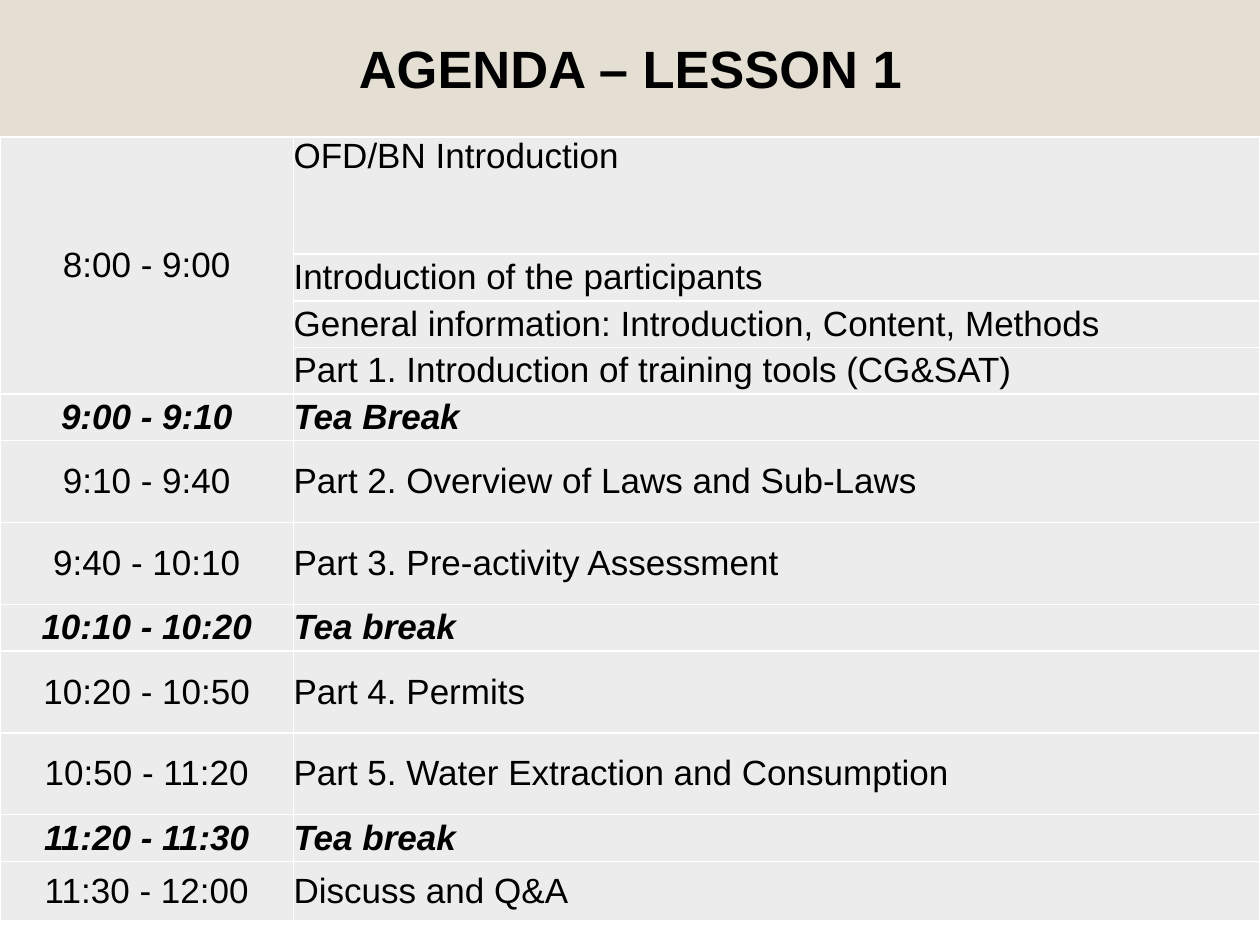
from dataclasses import dataclass

from lxml.etree import SubElement
from pptx import Presentation
from pptx.dml.color import RGBColor
from pptx.enum.shapes import MSO_SHAPE
from pptx.enum.text import MSO_ANCHOR, PP_ALIGN
from pptx.oxml.ns import qn
from pptx.util import Inches, Pt


@dataclass(frozen=True)
class Theme:
    """Colours, font and type sizes of the agenda."""

    font: str = "Arial"
    title_size: int = 30
    body_size: int = 20
    ink: str = "000000"
    band: str = "E4DFD2"
    cell: str = "ECECEC"
    border: str = "FFFFFF"


SLOTS = [
    ("8:00 - 9:00", [
        "OFD/BN Introduction",
        "Introduction of the participants",
        "General information: Introduction, Content, Methods",
        "Part 1. Introduction of training tools (CG&SAT)",
    ]),
    ("9:00 - 9:10", ["Tea Break"]),
    ("9:10 - 9:40", ["Part 2. Overview of Laws and Sub-Laws"]),
    ("9:40 - 10:10", ["Part 3. Pre-activity Assessment"]),
    ("10:10 - 10:20", ["Tea break"]),
    ("10:20 - 10:50", ["Part 4. Permits"]),
    ("10:50 - 11:20", ["Part 5. Water Extraction and Consumption"]),
    ("11:20 - 11:30", ["Tea break"]),
    ("11:30 - 12:00", ["Discuss and Q&A"]),
]
SHORT, TALL = 0.37, 0.65
ROW_HEIGHTS = [0.93, *[SHORT] * 4, TALL, TALL, SHORT, TALL, TALL, SHORT, 0.47]
COLUMN_WIDTHS = [2.33, 7.67]


class AgendaSlide:
    """Draws agenda elements on one slide in one theme."""

    def __init__(self, presentation, theme):
        """Add a blank slide to the presentation."""
        self.theme = theme
        self.width = presentation.slide_width
        self.height = presentation.slide_height
        self.slide = presentation.slides.add_slide(presentation.slide_layouts[6])

    def place(self, left, top, width, height):
        """Turn shares of the slide into lengths."""
        return (int(left * self.width), int(top * self.height),
                int(width * self.width), int(height * self.height))

    def style(self, paragraph, text, size, align, bold=False, italic=False):
        """Write text into a paragraph in the theme font."""
        paragraph.text = text
        paragraph.alignment = align
        font = paragraph.font
        font.name, font.size = self.theme.font, Pt(size)
        font.bold, font.italic = bold, italic
        font.color.rgb = RGBColor.from_string(self.theme.ink)

    def band(self, *area):
        """Draw a plain coloured band."""
        shape = self.slide.shapes.add_shape(MSO_SHAPE.RECTANGLE, *self.place(*area))
        shape.shadow.inherit = False
        shape.fill.solid()
        shape.fill.fore_color.rgb = RGBColor.from_string(self.theme.band)
        shape.line.fill.background()

    def title(self, text, *area):
        """Write the centred title."""
        frame = self.slide.shapes.add_textbox(*self.place(*area)).text_frame
        frame.word_wrap = True
        frame.margin_left = frame.margin_right = 0
        frame.margin_top = frame.margin_bottom = 0
        paragraph = frame.paragraphs[0]
        paragraph.line_spacing = Pt(32.7)
        self.style(paragraph, text, self.theme.title_size, PP_ALIGN.CENTER, bold=True)

    def prepare_cell(self, cell):
        """Give a cell its borders, fill and margins."""
        properties = cell._tc.get_or_add_tcPr()
        for side in ("a:lnL", "a:lnR", "a:lnT", "a:lnB"):
            line = SubElement(properties, qn(side), w=str(Pt(1)))
            fill = SubElement(line, qn("a:solidFill"))
            SubElement(fill, qn("a:srgbClr"), val=self.theme.border)
        cell.fill.solid()
        cell.fill.fore_color.rgb = RGBColor.from_string(self.theme.cell)
        cell.margin_left = cell.margin_right = 0
        cell.margin_top = cell.margin_bottom = 0
        cell.vertical_anchor = MSO_ANCHOR.MIDDLE

    def agenda(self, slots, column_widths, row_heights, *area):
        """Draw the timetable, merging the time of slots with several topics."""
        table = self.slide.shapes.add_table(
            len(row_heights), len(column_widths), *self.place(*area)).table
        table.first_row = table.horz_banding = False
        for column, width in zip(table.columns, column_widths):
            column.width = Inches(width)
        for row, height in zip(table.rows, row_heights):
            row.height = Inches(height)
        for cell in table.iter_cells():
            self.prepare_cell(cell)
            cell.text_frame.paragraphs[0].font.size = Pt(self.theme.body_size)
        first = 0
        for time, topics in slots:
            last = first + len(topics) - 1
            time_cell = table.cell(first, 0)
            if last > first:
                time_cell.merge(table.cell(last, 0))
            pause = topics[0].lower() == "tea break"
            size = self.theme.body_size
            self.style(time_cell.text_frame.paragraphs[0], time, size,
                       PP_ALIGN.CENTER, pause, pause)
            for row, topic in enumerate(topics, first):
                self.style(table.cell(row, 1).text_frame.paragraphs[0], topic, size,
                           PP_ALIGN.LEFT, pause, pause)
            first = last + 1
        table.cell(0, 1).vertical_anchor = MSO_ANCHOR.TOP


def main():
    """Build and save the agenda."""
    presentation = Presentation()
    presentation.slide_width, presentation.slide_height = Inches(10), Inches(7.5)
    agenda_slide = AgendaSlide(presentation, Theme())
    agenda_slide.band(0, 0, 1, 0.144)
    agenda_slide.title("AGENDA – LESSON 1", 0.038, 0.044, 0.925, 0.06)
    agenda_slide.agenda(SLOTS, COLUMN_WIDTHS, ROW_HEIGHTS,
                        0, 0.145, 1, sum(ROW_HEIGHTS) / 7.5)
    presentation.save("out.pptx")


if __name__ == "__main__":
    main()
